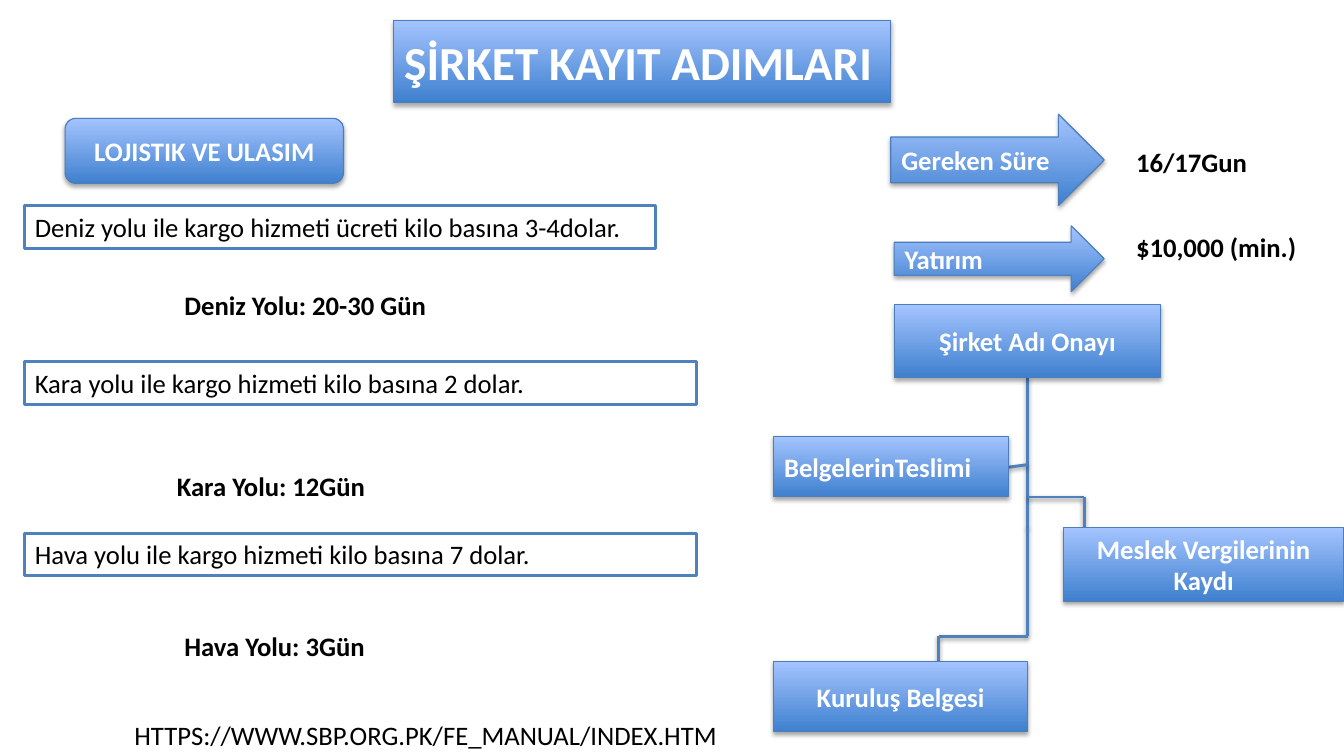
"""Build a slide on company registration steps, freight and transport."""
from dataclasses import dataclass

from lxml import etree
from pptx import Presentation
from pptx.dml.color import RGBColor
from pptx.enum.shapes import MSO_CONNECTOR, MSO_SHAPE
from pptx.enum.text import MSO_ANCHOR, MSO_AUTO_SIZE, PP_ALIGN
from pptx.oxml.ns import qn
from pptx.shapes.base import BaseShape
from pptx.slide import Slide
from pptx.util import Cm, Pt

RECT = MSO_SHAPE.RECTANGLE
ROUND = MSO_SHAPE.ROUNDED_RECTANGLE
ARROW = MSO_SHAPE.RIGHT_ARROW
LINE = MSO_CONNECTOR.STRAIGHT
LEFT, MID = PP_ALIGN.LEFT, PP_ALIGN.CENTER
TOP, CORE = MSO_ANCHOR.TOP, MSO_ANCHOR.MIDDLE
FIXED = MSO_AUTO_SIZE.NONE

COLORS = {
    "deep": "3F80CE",
    "pale": "A4C4FF",
    "edge": "4B7EBC",
    "rule": "4F81BD",
    "white": "FFFFFF",
    "black": "000000",
}
ROW = 1.02
SIDE = 0.58
NOTE = 26.8
TRUNK = 24.47


@dataclass(frozen=True)
class Block:
    """A gradient shape with white bold text."""
    text: str
    box: tuple[float, float, float, float]
    form: MSO_SHAPE = RECT
    align: PP_ALIGN = MID
    size: int = 18


@dataclass(frozen=True)
class Label:
    """A line of black text, framed or plain."""
    text: str
    left: float
    top: float
    width: float
    bold: bool = True
    framed: bool = False


@dataclass(frozen=True)
class Link:
    """A straight line between two points."""
    start: tuple[float, float]
    end: tuple[float, float]


TITLE = Block("ŞİRKET KAYIT ADIMLARI", (9.37, 0.48, 11.84, 1.96), align=LEFT, size=32)

BLOCKS = [
    Block("Gereken Süre", (21.21, 2.72, 5.08, 2.18), ARROW, LEFT),
    Block("Yatırım", (21.29, 5.38, 5, 1.57), ARROW, LEFT),
    Block("Şirket Adı Onayı", (21.29, 7.26, 6.35, 1.73)),
    Block("BelgelerinTeslimi", (18.42, 10.39, 5.59, 1.45), align=LEFT),
    Block("Meslek Vergilerinin Kaydı", (25.32, 12.57, 6.68, 1.75)),
    Block("Kuruluş Belgesi", (18.42, 15.75, 6.05, 1.68)),
    Block("LOJISTIK VE ULASIM", (1.55, 2.82, 6.63, 1.55), ROUND),
]

LABELS = [
    Label("16/17Gun", NOTE, 3.35, 4.37),
    Label("$10,000 (min.)", NOTE, 5.38, 5.2),
    Label("Deniz yolu ile kargo hizmeti ücreti kilo basına 3-4dolar.",
          SIDE, 4.9, 15.04, False, True),
    Label("Kara yolu ile kargo hizmeti kilo basına 2 dolar.", SIDE, 8.61, 16, False, True),
    Label("Hava yolu ile kargo hizmeti kilo basına 7 dolar.", SIDE, 12.7, 16, False, True),
    Label("Deniz Yolu: 20-30 Gün", 4.14, 6.76, 6.4),
    Label("Kara Yolu: 12Gün", 3.96, 11.07, 5.15),
    Label("Hava Yolu: 3Gün", 4.14, 14.88, 4.95),
    Label("HTTPS://WWW.SBP.ORG.PK/FE_MANUAL/INDEX.HTM", 2.95, 16.99, 14.8, False),
]

LINKS = [
    Link((TRUNK, 8.99), (TRUNK, 12.57)),
    Link((TRUNK, 11.07), (24.01, 11.13)),
    Link((TRUNK, 11.84), (25.81, 11.84)),
    Link((25.81, 11.84), (25.81, 12.57)),
    Link((TRUNK, 12.57), (TRUNK, 15.16)),
    Link((TRUNK, 15.16), (22.35, 15.16)),
    Link((22.35, 15.16), (22.35, 15.75)),
]


def tint(name: str) -> RGBColor:
    """Return a named colour."""
    return RGBColor.from_string(COLORS[name])


def apply(target: object, values: dict[str, object]) -> None:
    """Set each value on the target."""
    for name, value in values.items():
        setattr(target, name, value)


def stroke(shape: BaseShape, color: str, width: float) -> None:
    """Give a shape its line."""
    shape.line.color.rgb = tint(color)
    shape.line.width = Pt(width)


def shade(shape: BaseShape, reach: float, alpha: int) -> None:
    """Cast a soft shadow straight down."""
    parts = shape._element.spPr
    for old in parts.findall(qn("a:effectLst")):
        parts.remove(old)
    effect = etree.SubElement(parts, qn("a:effectLst"))
    cast = etree.SubElement(effect, qn("a:outerShdw"), {
        "blurRad": str(Pt(3.1)), "dist": str(Pt(reach)),
        "dir": "5400000", "rotWithShape": "0",
    })
    color = etree.SubElement(cast, qn("a:srgbClr"), val=COLORS["black"])
    etree.SubElement(color, qn("a:alpha"), val=str(alpha * 1000))


def write(shape: BaseShape, text: str, align: PP_ALIGN, anchor: MSO_ANCHOR,
          size: int, bold: bool, color: str) -> None:
    """Fill a shape with one formatted paragraph."""
    frame = shape.text_frame
    frame.text = text
    apply(frame, {"word_wrap": True, "auto_size": FIXED, "vertical_anchor": anchor})
    para = frame.paragraphs[0]
    para.alignment = align
    font = para.runs[0].font
    apply(font, {"name": "Calibri", "size": Pt(size), "bold": bold})
    font.color.rgb = tint(color)


def style(shape: BaseShape, block: Block) -> None:
    """Dress a shape as a gradient block."""
    fill = shape.fill
    fill.gradient()
    fill.gradient_angle = 90
    for stop, name, place in zip(fill.gradient_stops, ("deep", "pale"), (0, 1)):
        stop.color.rgb = tint(name)
        stop.position = place
    stroke(shape, "edge", 0.75)
    shade(shape, 1.8, 35)
    write(shape, block.text, block.align, CORE, block.size, True, "white")


def draw_title(slide: Slide, block: Block) -> None:
    """Place and format the title."""
    shape = slide.shapes.title
    apply(shape, dict(zip(("left", "top", "width", "height"), map(Cm, block.box))))
    style(shape, block)


def draw_block(slide: Slide, block: Block) -> None:
    """Add a gradient block."""
    style(slide.shapes.add_shape(block.form, *map(Cm, block.box)), block)


def draw_label(slide: Slide, label: Label) -> None:
    """Add a framed or plain line of text."""
    box = tuple(map(Cm, (label.left, label.top, label.width, ROW)))
    if label.framed:
        shape = slide.shapes.add_shape(RECT, *box)
        shape.shadow.inherit = False
        shape.fill.solid()
        shape.fill.fore_color.rgb = tint("white")
        stroke(shape, "rule", 2)
    else:
        shape = slide.shapes.add_textbox(*box)
    write(shape, label.text, LEFT, TOP, 18, label.bold, "black")


def draw_link(slide: Slide, link: Link) -> None:
    """Add a line of the step tree."""
    line = slide.shapes.add_connector(LINE, *map(Cm, link.start + link.end))
    stroke(line, "rule", 2)
    shade(line, 1.6, 38)


def main() -> None:
    """Build and save the slide."""
    deck = Presentation()
    apply(deck, {"slide_width": Cm(32), "slide_height": Cm(18.01)})
    slide = deck.slides.add_slide(deck.slide_layouts[5])
    draw_title(slide, TITLE)
    for draw, items in ((draw_link, LINKS), (draw_block, BLOCKS), (draw_label, LABELS)):
        for item in items:
            draw(slide, item)
    deck.save("out.pptx")


if __name__ == "__main__":
    main()
